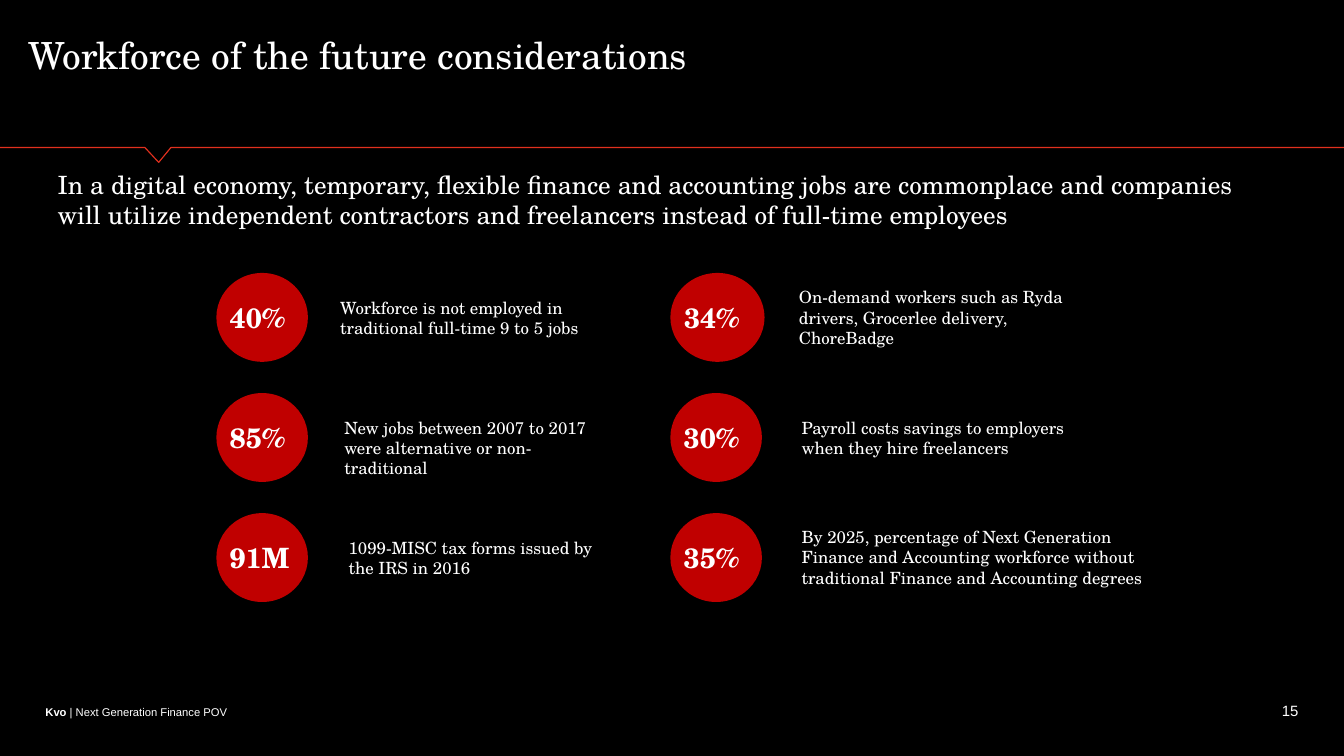
from pptx import Presentation
from pptx.dml.color import RGBColor
from pptx.enum import shapes, text
from pptx.oxml import parse_xml
from pptx.oxml.ns import nsdecls
from pptx.util import Cm, Pt

BLACK = RGBColor(0x00, 0x00, 0x00)
WHITE = RGBColor(0xFF, 0xFF, 0xFF)
CIRCLE_RED = RGBColor(0xC0, 0x00, 0x00)
RULE_RED = RGBColor(0xE1, 0x30, 0x1E)
SERIF = "TeX Gyre Schola"
SANS = "Arial"
TOP = text.MSO_ANCHOR.TOP
MIDDLE = text.MSO_ANCHOR.MIDDLE


def format_frame(shape, horizontal, vertical, anchor=TOP):
    """Set the side and top/bottom insets in cm, the wrapping and the anchor."""
    frame = shape.text_frame
    frame.word_wrap = True
    frame.auto_size = text.MSO_AUTO_SIZE.NONE
    frame.margin_left = frame.margin_right = Cm(horizontal)
    frame.margin_top = frame.margin_bottom = Cm(vertical)
    frame.vertical_anchor = anchor


def add_run(shape, words, size, font=SERIF, bold=False, align=text.PP_ALIGN.LEFT):
    paragraph = shape.text_frame.paragraphs[0]
    paragraph.alignment = align
    run = paragraph.add_run()
    run.text = words
    run.font.size = Pt(size)
    run.font.name = font
    run.font.bold = bold
    run.font.color.rgb = WHITE


presentation = Presentation()
presentation.slide_width = Cm(25.4)
presentation.slide_height = Cm(14.29)
slide = presentation.slides.add_slide(presentation.slide_layouts[1])
slide.background.fill.solid()
slide.background.fill.fore_color.rgb = BLACK

# Title and lead sentence
title, lead = slide.placeholders
title.left, title.top, title.width, title.height = Cm(0.53), Cm(0.61), Cm(23.32), Cm(0.86)
format_frame(title, 0, 0)
add_run(title, "Workforce of the future considerations", 20)

lead.left, lead.top, lead.width, lead.height = Cm(0.84), Cm(3.07), Cm(23.55), Cm(1.9)
format_frame(lead, 0.25, 0.13)
add_run(lead, "In a digital economy, temporary, flexible finance and accounting jobs are "
        "commonplace and companies will utilize independent contractors and freelancers "
        "instead of full-time employees", 13.5)
lead_paragraph = lead.text_frame.paragraphs[0]
lead_paragraph.space_before = Pt(0)
properties = lead_paragraph._p.get_or_add_pPr()
properties.set("marL", "0")
properties.set("indent", "0")
properties.append(parse_xml(f"<a:buNone {nsdecls('a')}/>"))

# Rule with a notch under the title
builder = slide.shapes.build_freeform(Cm(25.4), Cm(2.79))
notch = [(3.23, 2.79), (3.0, 3.07), (2.74, 2.79), (0, 2.79)]
builder.add_line_segments([(Cm(x), Cm(y)) for x, y in notch], close=False)
rule = builder.convert_to_shape()
rule.shadow.inherit = False
rule.fill.background()
rule.line.color.rgb = RULE_RED
rule.line.width = Pt(0.63)

# Two columns of figures: each caption is centred on the height of its circle
FIRST_ROW, ROW_PITCH, CIRCLE_HEIGHT = 5.16, 2.27, 1.68
# circle left, then (figure, circle width, caption, left, width, height, anchor)
columns = [
    (4.09, [
        ("40%", 1.73, "Workforce is not employed in traditional full-time 9 to 5 jobs",
         6.27, 5.33, 0.91, TOP),
        ("85%", 1.73, "New jobs between 2007 to 2017 were alternative or non-traditional",
         6.35, 5.33, 0.91, TOP),
        ("91M", 1.73, "1099-MISC tax forms issued by the IRS in 2016",
         6.43, 5.33, 0.91, TOP),
    ]),
    (12.67, [
        ("34%", 1.78, "On-demand workers such as Ryda drivers, Grocerlee delivery, ChoreBadge",
         14.94, 5.77, 0.91, MIDDLE),
        ("30%", 1.73, "Payroll costs savings to employers when they hire freelancers",
         14.99, 5.33, 0.91, TOP),
        ("35%", 1.73, "By 2025, percentage of Next Generation Finance and Accounting workforce "
         "without traditional Finance and Accounting degrees",
         14.99, 7.04, 1.32, TOP),
    ]),
]
for circle_left, facts in columns:
    for row, (figure, diameter, words, left, width, height, anchor) in enumerate(facts):
        top = FIRST_ROW + row * ROW_PITCH
        circle = slide.shapes.add_shape(
            shapes.MSO_SHAPE.OVAL, Cm(circle_left), Cm(top), Cm(diameter), Cm(CIRCLE_HEIGHT))
        circle.shadow.inherit = False
        circle.fill.solid()
        circle.fill.fore_color.rgb = CIRCLE_RED
        circle.line.fill.background()
        format_frame(circle, 0, 0.08, MIDDLE)
        add_run(circle, figure, 15, bold=True)

        caption_top = top + (CIRCLE_HEIGHT - height) / 2
        caption = slide.shapes.add_textbox(Cm(left), Cm(caption_top), Cm(width), Cm(height))
        format_frame(caption, 0.16, 0.08, anchor)
        add_run(caption, words, 9)

# Footer and page number
footer = slide.shapes.add_textbox(Cm(0.86), Cm(13.34), Cm(7.11), Cm(0.25))
format_frame(footer, 0, 0)
add_run(footer, "Kvo", 6, SANS, bold=True)
add_run(footer, " | Next Generation Finance POV", 6, SANS)

page_number = slide.shapes.add_textbox(Cm(18.62), Cm(13.26), Cm(5.92), Cm(0.33))
format_frame(page_number, 0, 0, MIDDLE)
add_run(page_number, "15", 8, SANS, align=text.PP_ALIGN.RIGHT)

presentation.save("out.pptx")
